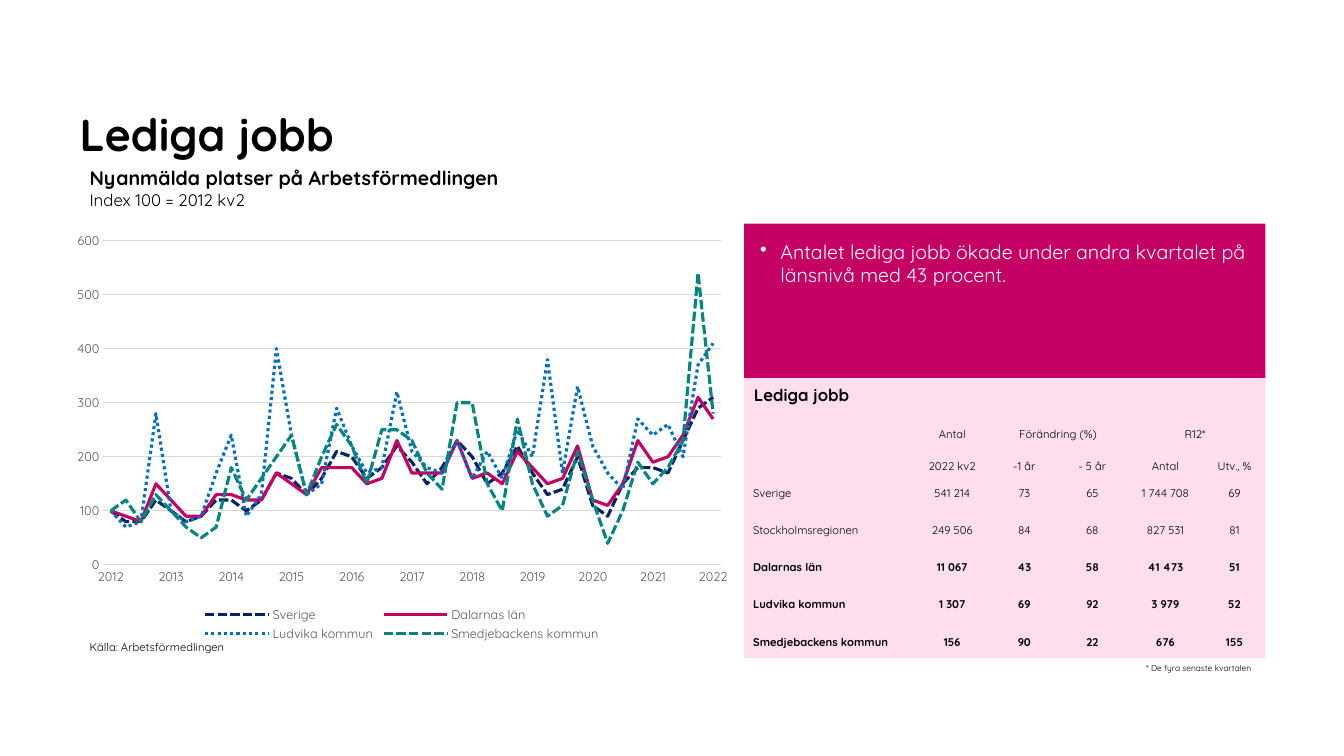
from dataclasses import dataclass

from lxml import etree
from pptx import Presentation
from pptx.chart.data import CategoryChartData
from pptx.dml.color import RGBColor
from pptx.enum.chart import XL_CHART_TYPE as ChartType, XL_LEGEND_POSITION as LegendPosition
from pptx.enum.chart import XL_TICK_MARK as TickMark
from pptx.enum.dml import MSO_LINE_DASH_STYLE as Dash
from pptx.enum.shapes import MSO_SHAPE as Shape
from pptx.enum.text import MSO_ANCHOR as Anchor, MSO_AUTO_SIZE as AutoSize, PP_ALIGN as Align
from pptx.oxml import parse_xml
from pptx.oxml.ns import nsdecls, qn
from pptx.util import Inches, Pt


@dataclass(frozen=True)
class Theme:
    font: str = "Quicksand"
    black: str = "000000"
    white: str = "FFFFFF"
    magenta: str = "C40064"
    pink: str = "FEDEED"
    navy: str = "052364"
    blue: str = "006EBF"
    teal: str = "00867F"
    grid: str = "D9D9D9"
    label: str = "595959"
    title: int = 32
    body: int = 14
    heading: int = 12
    axis: int = 9
    small: int = 8
    footnote: int = 6


THEME = Theme()
NO_TABLE_STYLE = "{2D5ABB26-0587-4C30-8999-92F81FD0307C}"

QUARTERS = [str(2012 + n // 4) if n % 4 == 0 else "" for n in range(41)]
SERIES = [
    ("Sverige", THEME.navy, Dash.SQUARE_DOT,
     [100, 80, 80, 120, 100, 80, 90, 120, 120, 100, 120, 170, 160, 130, 160, 210, 200, 160, 180, 220, 190,
      150, 180, 230, 200, 150, 170, 220, 170, 130, 140, 200, 110, 90, 150, 180, 180, 170, 230, 290, 310]),
    ("Dalarnas län", THEME.magenta, None,
     [100, 90, 80, 150, 120, 90, 90, 130, 130, 120, 120, 170, 150, 130, 180, 180, 180, 150, 160, 230, 170,
      170, 170, 230, 160, 170, 150, 210, 180, 150, 160, 220, 120, 110, 150, 230, 190, 200, 240, 310, 270]),
    ("Ludvika kommun", THEME.blue, Dash.ROUND_DOT,
     [100, 70, 80, 280, 100, 80, 90, 170, 240, 90, 130, 400, 240, 130, 150, 290, 220, 170, 180, 320, 210,
      180, 170, 230, 160, 210, 160, 250, 200, 380, 170, 330, 220, 170, 140, 270, 240, 260, 200, 370, 410]),
    ("Smedjebackens kommun", THEME.teal, Dash.SQUARE_DOT,
     [100, 120, 80, 130, 100, 70, 50, 70, 180, 120, 160, 200, 240, 130, 200, 260, 220, 150, 250, 250, 230,
      170, 140, 300, 300, 150, 100, 270, 150, 90, 110, 210, 120, 40, 100, 190, 150, 180, 230, 540, 280]),
]

COLUMN_WIDTHS = [1.69, 0.75, 0.68, 0.67, 0.78, 0.59]
ROW_HEIGHTS = [0.31, 0.32] + [0.37] * 5
HEADER_ROWS = 2
FIRST_BOLD_ROW = 4
JOB_ROWS = [
    ["", "Antal", "Förändring (%)", "", "R12*", ""],
    ["", "2022 kv2", "-1 år", "- 5 år", "Antal", "Utv., %"],
    ["Sverige", "541 214", "73", "65", "1 744 708", "69"],
    ["Stockholmsregionen", "249 506", "84", "68", "827 531", "81"],
    ["Dalarnas län", "11 067", "43", "58", "41 473", "51"],
    ["Ludvika kommun", "1 307", "69", "92", "3 979", "52"],
    ["Smedjebackens kommun", "156", "90", "22", "676", "155"],
]


def style_font(font, size, color=THEME.black, bold=False):
    font.name = THEME.font
    font.size = Pt(size)
    font.bold = bold
    font.color.rgb = RGBColor.from_string(color)


def set_margins(holder, left, top, right, bottom):
    holder.margin_left, holder.margin_top = Inches(left), Inches(top)
    holder.margin_right, holder.margin_bottom = Inches(right), Inches(bottom)


def add_label(page, box, text, size, bold=False):
    """Add an unwrapped text box and return its paragraph."""
    frame = page.shapes.add_textbox(*map(Inches, box)).text_frame
    frame.word_wrap = False
    frame.auto_size = AutoSize.SHAPE_TO_FIT_TEXT
    para = frame.paragraphs[0]
    para.text = text
    style_font(para.font, size, bold=bold)
    return para


def add_panel(page, box, color):
    panel = page.shapes.add_shape(Shape.RECTANGLE, *map(Inches, box))
    panel.shadow.inherit = False
    panel.fill.solid()
    panel.fill.fore_color.rgb = RGBColor.from_string(color)
    panel.line.fill.background()
    return panel


def add_headings(page, left, top):
    frame = page.shapes.add_textbox(Inches(left), Inches(top), Inches(9.22), Inches(1.22)).text_frame
    frame.word_wrap = True
    frame.vertical_anchor = Anchor.BOTTOM
    set_margins(frame, 0, 0, 0, 0)
    frame.text = "Lediga jobb"
    style_font(frame.paragraphs[0].font, THEME.title, bold=True)

    para = add_label(page, (left, top + 1.23, 4.27, 0.54), "", THEME.body)
    lead = para.add_run()
    lead.text = "Nyanmälda platser på Arbetsförmedlingen"
    style_font(lead.font, THEME.body, bold=True)
    para.add_line_break()
    index = para.add_run()
    index.text = "Index 100 = 2012 kv2"
    style_font(index.font, THEME.heading)


def add_message(page, box):
    panel = add_panel(page, box, THEME.magenta)
    frame = panel.text_frame
    frame.word_wrap = True
    frame.vertical_anchor = Anchor.TOP
    set_margins(frame, 0.16, 0.16, 0.16, 0.16)
    para = frame.paragraphs[0]
    para.text = "Antalet lediga jobb ökade under andra kvartalet på länsnivå med 43 procent."
    para.alignment = Align.LEFT
    properties = para._p.get_or_add_pPr()
    properties.set("marL", str(Inches(0.2)))
    properties.set("indent", str(Inches(-0.2)))
    etree.SubElement(properties, qn("a:buChar")).set("char", "•")
    style_font(para.font, THEME.body, THEME.white)


def fill_cell(cell, text, is_label, is_header, bold):
    cell.fill.background()
    set_margins(cell, 0.01, 0.01, 0.01, 0)
    cell.vertical_anchor = Anchor.BOTTOM if is_header else Anchor.MIDDLE
    para = cell.text_frame.paragraphs[0]
    para.text = text
    para.alignment = Align.LEFT if is_label else Align.CENTER
    if is_label:
        para._p.get_or_add_pPr().set("marL", str(Inches(0.08)))
    style_font(para.font, THEME.small, bold=bold)
    if not text:
        etree.SubElement(para._p, qn("a:endParaRPr")).set("sz", str(THEME.small * 100))


def add_job_table(page, box):
    left, top, width, height = box
    add_panel(page, box, THEME.pink)
    add_label(page, (left, top + 0.02, 1.17, 0.3), "Lediga jobb", THEME.heading, bold=True)
    add_label(page, (left + 3.89, top + height, 1.29, 0.2), "* De fyra senaste kvartalen", THEME.footnote)
    table = page.shapes.add_table(
        len(JOB_ROWS), len(COLUMN_WIDTHS), Inches(left), Inches(top + 0.32),
        Inches(width), Inches(sum(ROW_HEIGHTS))).table
    table.first_row = table.horz_banding = False
    table._tbl.tblPr.find(qn("a:tableStyleId")).text = NO_TABLE_STYLE
    for column, column_width in zip(table.columns, COLUMN_WIDTHS):
        column.width = Inches(column_width)
    for r, (row, values) in enumerate(zip(table.rows, JOB_ROWS)):
        row.height = Inches(ROW_HEIGHTS[r])
        for c, value in enumerate(values):
            fill_cell(table.cell(r, c), value, c == 0, r < HEADER_ROWS, r >= FIRST_BOLD_ROW)
    for c in (2, 4):
        table.cell(0, c).merge(table.cell(0, c + 1))


def make_layout(x, y, w, h, inner=False):
    """Return a chart layout given in fractions of the chart area."""
    target = '<c:layoutTarget val="inner"/>' if inner else ""
    return parse_xml(
        f'<c:layout {nsdecls("c")}><c:manualLayout>{target}<c:xMode val="edge"/><c:yMode val="edge"/>'
        f'<c:x val="{x}"/><c:y val="{y}"/><c:w val="{w}"/><c:h val="{h}"/></c:manualLayout></c:layout>')


def style_line(line, color, width):
    line.color.rgb = RGBColor.from_string(color)
    line.width = Pt(width)


def add_index_chart(page, box):
    data = CategoryChartData()
    data.categories = QUARTERS
    for name, _, _, values in SERIES:
        data.add_series(name, values)
    chart = page.shapes.add_chart(ChartType.LINE, *map(Inches, box), data).chart
    chart.has_title = False
    style_font(chart.font, 10)
    for series, (_, color, dash, _) in zip(chart.plots[0].series, SERIES):
        series.smooth = False
        style_line(series.format.line, color, 2.25)
        if dash:
            series.format.line.dash_style = dash
    years, values = chart.category_axis, chart.value_axis
    for axis in (years, values):
        axis.major_tick_mark = axis.minor_tick_mark = TickMark.NONE
        style_font(axis.tick_labels.font, THEME.axis, THEME.label)
    style_line(years.format.line, THEME.grid, 0.75)
    skip = parse_xml(f'<c:tickLblSkip {nsdecls("c")} val="4"/>')
    years._element.find(qn("c:noMultiLvlLbl")).addprevious(skip)
    values.minimum_scale, values.maximum_scale, values.major_unit = 0, 600, 100
    values.format.line.fill.background()
    style_line(values.major_gridlines.format.line, THEME.grid, 0.75)

    chart.has_legend = True
    legend = chart.legend
    legend.position = LegendPosition.BOTTOM
    legend.include_in_layout = False
    style_font(legend.font, THEME.axis, THEME.label)
    for old in legend._element.findall(qn("c:layout")):
        legend._element.remove(old)
    legend._element.find(qn("c:legendPos")).addnext(make_layout(0.2, 0.9, 0.6, 0.1))
    plot_area = chart._chartSpace.chart.plotArea
    for old in plot_area.findall(qn("c:layout")):
        plot_area.remove(old)
    plot_area.insert(0, make_layout(0.06, 0.04, 0.91, 0.77, inner=True))


def build_jobs_slide(deck):
    page = deck.slides.add_slide(deck.slide_layouts[6])
    add_headings(page, 0.79, 0.37)
    add_label(page, (0.79, 6.3, 1.64, 0.24), "Källa: Arbetsförmedlingen", THEME.small)
    add_message(page, (7.38, 2.22, 5.17, 1.53))
    add_job_table(page, (7.38, 3.75, 5.17, 2.78))
    add_index_chart(page, (0.62, 2.22, 6.73, 4.18))


def main():
    deck = Presentation()
    deck.slide_width, deck.slide_height = Inches(13.33), Inches(7.5)
    build_jobs_slide(deck)
    deck.save("out.pptx")


if __name__ == "__main__":
    main()
